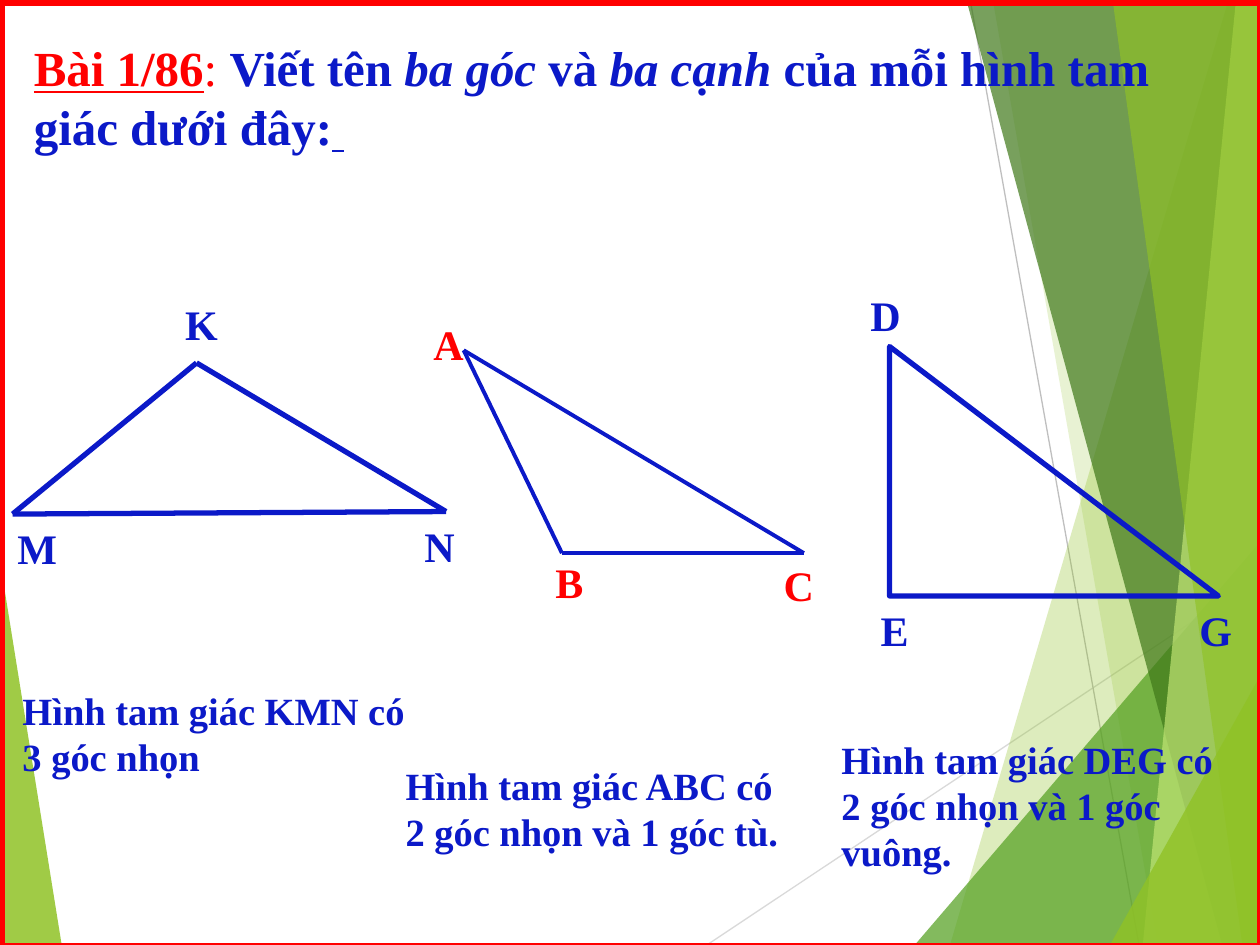
from pptx import Presentation
from pptx.dml.color import RGBColor
from pptx.enum.shapes import MSO_CONNECTOR, MSO_SHAPE
from pptx.enum.text import MSO_ANCHOR, MSO_AUTO_SIZE
from pptx.oxml.ns import qn
from pptx.util import Inches, Pt
from lxml import etree

STRAIGHT = MSO_CONNECTOR.STRAIGHT
RECT = MSO_SHAPE.RECTANGLE
WEDGE = MSO_SHAPE.ISOSCELES_TRIANGLE
TOP = MSO_ANCHOR.TOP
GROW = MSO_AUTO_SIZE.SHAPE_TO_FIT_TEXT

COLORS = {
    "blue": "0B19C8", "red": "FF0000", "lime": "90C226", "green": "54A021",
    "dark": "3F7819", "pale": "C0E474", "gray": "BFBFBF", "light": "D9D9D9",
}


def paint(name):
    return RGBColor.from_string(COLORS[name])


class Board:
    font = "Times New Roman"
    frame = {"word_wrap": True, "auto_size": GROW, "vertical_anchor": TOP}

    def __init__(self, slide):
        self.slide = slide
        self.shapes = slide.shapes

    def stroke(self, shape, color, width):
        shape.line.color.rgb = paint(color)
        shape.line.width = Pt(width)

    def line(self, start, end, color, width):
        ends = [Inches(v) for v in (*start, *end)]
        line = self.shapes.add_connector(STRAIGHT, *ends)
        self.stroke(line, color, width)
        etree.SubElement(line._element.spPr, qn("a:effectLst"))

    def facet(self, points, color, alpha):
        first, *rest = [(Inches(x), Inches(y)) for x, y in points]
        pen = self.shapes.build_freeform(*first)
        pen.add_line_segments(rest, close=True)
        shape = pen.convert_to_shape()
        shape.shadow.inherit = False
        shape.line.fill.background()
        shape.fill.solid()
        shape.fill.fore_color.rgb = paint(color)
        tint = shape._element.spPr.find(qn("a:solidFill"))[0]
        etree.SubElement(tint, qn("a:alpha"), val=str(alpha * 1000))

    def outline(self, kind, box, color, width):
        shape = self.shapes.add_shape(kind, *[Inches(v) for v in box])
        shape.shadow.inherit = False
        shape.fill.background()
        self.stroke(shape, color, width)
        return shape

    def text(self, box, runs, size, color="blue"):
        frame = self.shapes.add_textbox(*[Inches(v) for v in box]).text_frame
        for key, value in self.frame.items():
            setattr(frame, key, value)
        for words, style in runs:
            run = frame.paragraphs[0].add_run()
            run.text = words
            look = {"name": self.font, "size": Pt(size), "bold": True, **style}
            tone = look.pop("color", color)
            for key, value in look.items():
                setattr(run.font, key, value)
            run.font.color.rgb = paint(tone)

    def label(self, letter, x, y, width=0.42, height=0.5, color="blue"):
        self.text((x, y, width, height), [(letter, {})], 24, color)


def backdrop(board):
    board.facet([(-0.01, 4.39), (0.49, 7.5), (-0.01, 7.5)], "lime", 85)
    board.line((5.61, 7.5), (10.01, 4.57), "light", 0.75)
    board.line((7.7, 0), (9.04, 7.5), "gray", 0.75)
    bands = [
        (9.75, 7.54, "lime", 30), (7.88, 9.19, "lime", 20),
        (None, 7.26, "green", 72), (7.67, 9.7, "dark", 70),
        (9.81, 9.07, "pale", 70), (8.83, 9.86, "lime", 65),
        (None, 8.81, "lime", 80),
    ]
    peaks = {7.26: 4.29, 8.81: 5.35}
    for top, base, color, alpha in bands:
        if top is None:
            points = [(base, 7.5), (10.01, peaks[base]), (10.01, 7.5)]
        else:
            points = [(top, 0), (base, 7.5), (10.01, 7.5), (10.01, 0)]
        board.facet(points, color, alpha)


def main():
    deck = Presentation()
    deck.slide_width, deck.slide_height = Inches(10), Inches(7.5)
    board = Board(deck.slides.add_slide(deck.slide_layouts[6]))
    backdrop(board)

    board.text((0.17, 0.25, 9.75, 1.04), [
        ("Bài 1/86", {"color": "red", "underline": True}),
        (": ", {"color": "red", "bold": False}),
        ("Viết tên ", {}),
        ("ba góc ", {"italic": True}),
        ("và ", {}),
        ("ba cạnh ", {"italic": True}),
        ("của mỗi hình tam giác dưới đây:", {}),
        (" ", {"underline": True}),
    ], 28)

    sides = [
        ([(1.56, 2.88), (3.54, 4.06), (0.1, 4.08)], 3),
        ([(3.68, 2.78), (4.46, 4.39), (6.38, 4.39)], 2.25),
    ]
    for points, width in sides:
        for start, end in zip(points, points[1:] + points[:1]):
            board.line(start, end, "blue", width)
    wedge = board.outline(WEDGE, (7.06, 2.75, 2.61, 1.98), "blue", 3)
    wedge.adjustments[0] = 0

    for letter, x, y in [("K", 1.37, 2.32), ("M", 0.04, 4.1), ("N", 3.27, 4.08),
                         ("D", 6.81, 2.25), ("E", 6.89, 4.75), ("G", 9.42, 4.75)]:
        board.label(letter, x, y)
    for letter, x, y, width in [("A", 3.34, 2.48, 0.45), ("B", 4.31, 4.37, 0.38),
                                ("C", 6.12, 4.39, 0.38)]:
        board.label(letter, x, y, width, 0.37, "red")

    notes = [
        ("Hình tam giác KMN có 3 góc nhọn", 0.08, 5.4, 0.84),
        ("Hình tam giác ABC có 2 góc nhọn và 1 góc tù.", 3.12, 6, 0.84),
        ("Hình tam giác DEG có 2 góc nhọn và 1 góc vuông.", 6.58, 5.79, 1.21),
    ]
    for words, x, y, height in notes:
        board.text((x, y, 3.31, height), [(words, {})], 22)

    board.outline(RECT, (0.01, 0.02, 10, 7.5), "red", 4.5)
    deck.save("out.pptx")


if __name__ == "__main__":
    main()
